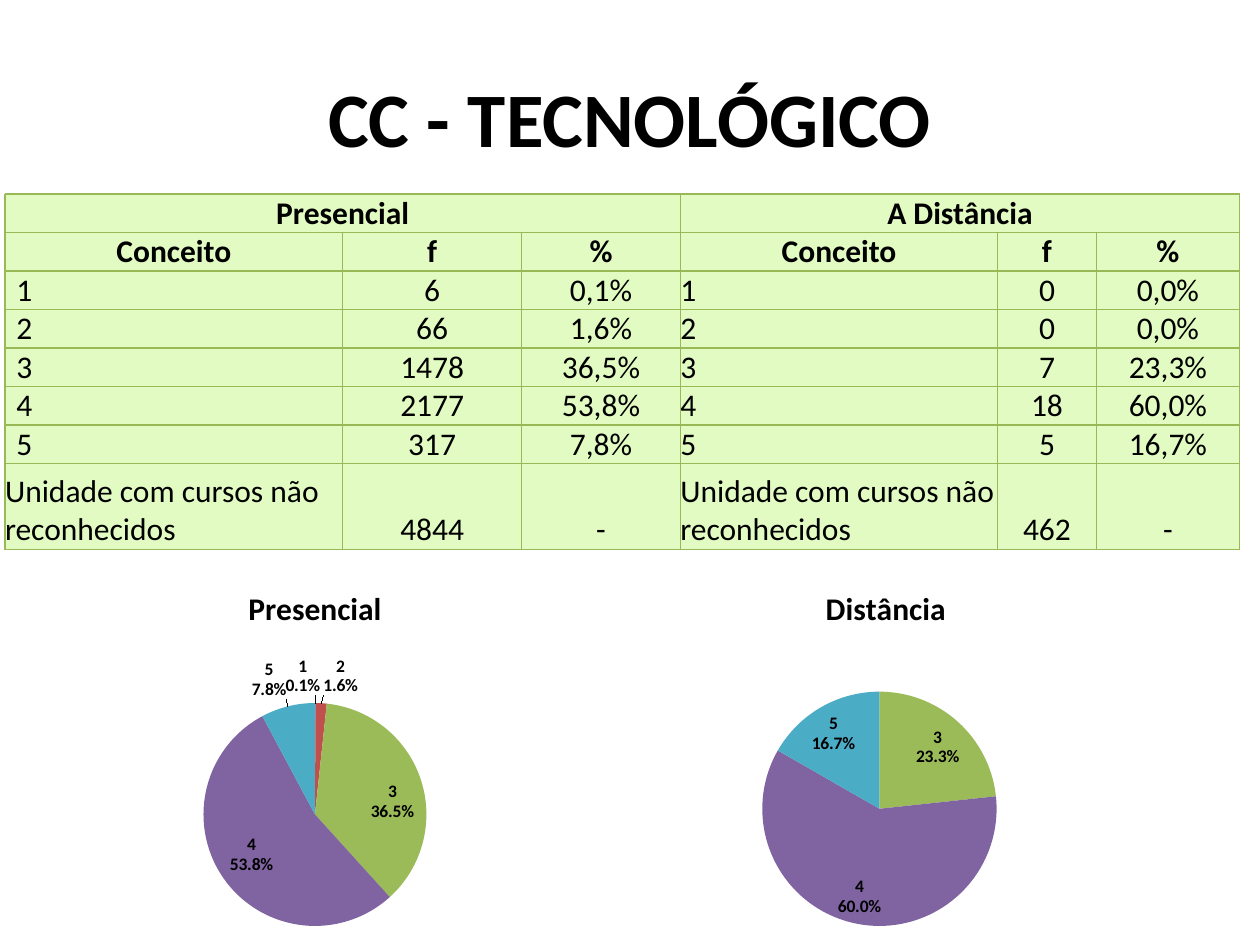
"""Build the slide of course grades for technological degrees, on site and distance."""
from copy import deepcopy
from dataclasses import dataclass

from lxml import etree
from pptx import Presentation
from pptx import util as u
from pptx.chart.data import CategoryChartData
from pptx.dml.color import RGBColor
from pptx.enum import chart as charts
from pptx.enum import text
from pptx.oxml import parse_xml
from pptx.oxml.ns import nsdecls, qn

WIDTH, HEIGHT = u.Inches(10), u.Inches(7.5)
FONT = "Calibri"
BLACK = RGBColor(0x00, 0x00, 0x00)
PALE_GREEN = RGBColor(0xE2, 0xFB, 0xC2)
GRID_GREEN = RGBColor(0x98, 0xB9, 0x55)
GRADE_COLOURS = [
    RGBColor(0x4F, 0x81, 0xBD),
    RGBColor(0xC0, 0x50, 0x4D),
    RGBColor(0x9B, 0xBB, 0x59),
    RGBColor(0x80, 0x64, 0xA2),
    RGBColor(0x4B, 0xAC, 0xC6),
]
GRADES = ["1", "2", "3", "4", "5"]
COLUMNS = [2.68, 1.42, 1.26, 2.52, 0.78, 1.14]
ROWS = [2.14 / 7] * 7 + [0.68]
UNRECOGNISED = "Unidade com cursos não reconhecidos"


@dataclass
class Mode:
    """One teaching mode: its block of the table and its pie."""

    heading: str
    pie_title: str
    counts: list[str]
    shares: list[float]
    unrecognised: str
    grade_indent: float
    pie_left: float
    pie_box: tuple[float, float, float, float]
    moved_place: str
    moved_labels: dict[int, tuple[float, float]]

    def rows(self) -> list[list[str]]:
        """Return the rows below the heading."""
        percents = [f"{share:.1f}%".replace(".", ",") for share in self.shares]
        return [
            ["Conceito", "f", "%"],
            *map(list, zip(GRADES, self.counts, percents)),
            [UNRECOGNISED, self.unrecognised, "-"],
        ]


MODES = [
    Mode("Presencial", "Presencial", ["6", "66", "1478", "2177", "317"],
         [0.1, 1.6, 36.5, 53.8, 7.8], "4844", 0.09, 0, (0.32, 0.36, 0.36, 0.59),
         "outEnd", {0: (-0.02, 0), 1: (0.03, 0), 4: (0, 0)}),
    Mode("A Distância", "Distância", ["0", "0", "7", "18", "5"],
         [0, 0, 23.3, 60, 16.7], "462", 0, 0.453, (0.3, 0.33, 0.38, 0.62),
         "inEnd", {2: (0.01, 0), 3: (-0.03, 0), 4: (-0.02, 0)}),
]


def style_font(font, size: float, bold: bool) -> None:
    """Set the common font with a size and weight."""
    font.name, font.size, font.bold = FONT, u.Pt(size), bold
    font.color.rgb = BLACK


def write(frame, words: str, *, size: float = 18, bold: bool = False,
          align=text.PP_ALIGN.CENTER) -> None:
    """Write one formatted paragraph in a text frame."""
    frame.word_wrap = True
    paragraph = frame.paragraphs[0]
    paragraph.alignment = align
    run = paragraph.add_run()
    run.text = words
    style_font(run.font, size, bold)


def format_cell(cell, indent: float = 0) -> None:
    """Give a cell its margins, borders and fill."""
    cell.margin_left = u.Inches(indent)
    cell.margin_right = cell.margin_top = cell.margin_bottom = 0
    cell.vertical_anchor = text.MSO_ANCHOR.BOTTOM
    properties = cell._tc.get_or_add_tcPr()
    for side in "LRTB":
        properties.append(parse_xml(
            f'<a:ln{side} {nsdecls("a")} w="{u.Pt(0.75)}"><a:solidFill>'
            f'<a:srgbClr val="{GRID_GREEN}"/></a:solidFill></a:ln{side}>'))
    cell.fill.solid()
    cell.fill.fore_color.rgb = PALE_GREEN


def add_grades_table(slide) -> None:
    """Draw the table with one block of three columns per mode."""
    table = slide.shapes.add_table(
        len(ROWS), len(COLUMNS), u.Inches(0.04), u.Inches(1.54),
        u.Inches(sum(COLUMNS)), u.Inches(sum(ROWS))).table
    table.first_row = table.horz_banding = False
    for column, width in zip(table.columns, COLUMNS):
        column.width = u.Inches(width)
    for row, height in zip(table.rows, ROWS):
        row.height = u.Inches(height)
    for block, mode in enumerate(MODES):
        first = block * 3
        for c in range(first, first + 3):
            format_cell(table.cell(0, c))
        heading = table.cell(0, first)
        heading.merge(table.cell(0, first + 2))
        write(heading.text_frame, mode.heading, bold=True)
        for r, words in enumerate(mode.rows(), start=1):
            for c, word in enumerate(words):
                cell = table.cell(r, first + c)
                is_grade = word in GRADES and c == 0
                format_cell(cell, mode.grade_indent if is_grade else 0)
                left = c == 0 and r > 1
                write(cell.text_frame, word, bold=r == 1,
                      align=text.PP_ALIGN.LEFT if left else text.PP_ALIGN.CENTER)


def manual_layout(**values: object):
    """Return a chart layout element with the given settings."""
    settings = "".join(f'<c:{key} val="{value}"/>' for key, value in values.items())
    return parse_xml(f'<c:layout {nsdecls("c")}><c:manualLayout>{settings}'
                     '</c:manualLayout></c:layout>')


def label_slices(series, mode: Mode) -> None:
    """Label slices with grade and share, leaving out empty ones."""
    labels = series.data_labels
    labels.show_category_name = labels.show_value = True
    labels.number_format, labels.number_format_is_linked = '0.0"%"', False
    labels.position = charts.XL_LABEL_POSITION.INSIDE_END
    style_font(labels.font, 10, True)
    root = labels._element
    separator = etree.Element(qn("c:separator"))
    separator.text = "\n"
    root.find(qn("c:showBubbleSize")).addnext(separator)
    shared = [item for item in root if item.tag != qn("c:showLeaderLines")]
    special = []
    for index, share in enumerate(mode.shares):
        if share and index not in mode.moved_labels:
            continue
        label = parse_xml(f'<c:dLbl {nsdecls("c")}><c:idx val="{index}"/></c:dLbl>')
        if share:
            x, y = mode.moved_labels[index]
            label.append(manual_layout(x=x, y=y))
            label.extend(deepcopy(shared))
            label.find(qn("c:dLblPos")).set("val", mode.moved_place)
        else:
            etree.SubElement(label, qn("c:delete")).set("val", "1")
        special.append(label)
    for place, label in enumerate(special):
        root.insert(place, label)


def add_pie(slide, mode: Mode) -> None:
    """Draw the pie of grades for one mode."""
    data = CategoryChartData(number_format="0.0")
    data.categories = GRADES
    data.add_series("Series 1", mode.shares)
    pie = slide.shapes.add_chart(
        charts.XL_CHART_TYPE.PIE, int(WIDTH * mode.pie_left), int(HEIGHT * 0.6),
        int(WIDTH * 0.5), int(HEIGHT * 0.4), data).chart
    style_font(pie.font, 10, False)
    pie.has_legend = False
    pie.has_title = True
    write(pie.chart_title.text_frame, mode.pie_title, bold=True)
    plot = pie.plots[0]
    plot.vary_by_categories = True
    series = plot.series[0]
    for index, colour in enumerate(GRADE_COLOURS):
        fill = series.points[index].format.fill
        fill.solid()
        fill.fore_color.rgb = colour
    label_slices(series, mode)
    area = pie._chartSpace.chart.plotArea
    for old in area.findall(qn("c:layout")):
        area.remove(old)
    x, y, w, h = mode.pie_box
    area.insert(0, manual_layout(layoutTarget="inner", xMode="edge", yMode="edge",
                                 x=x, y=y, w=w, h=h))


def main() -> None:
    """Build and save the slide."""
    deck = Presentation()
    deck.slide_width, deck.slide_height = WIDTH, HEIGHT
    slide = deck.slides.add_slide(deck.slide_layouts[6])
    title = slide.shapes.add_textbox(int(WIDTH * 0.05), int(HEIGHT * 0.04),
                                     int(WIDTH * 0.9), u.Inches(1.25)).text_frame
    title.vertical_anchor = text.MSO_ANCHOR.MIDDLE
    write(title, "CC - TECNOLÓGICO", size=44, bold=True)
    add_grades_table(slide)
    for mode in MODES:
        add_pie(slide, mode)
    deck.save("out.pptx")


if __name__ == "__main__":
    main()
